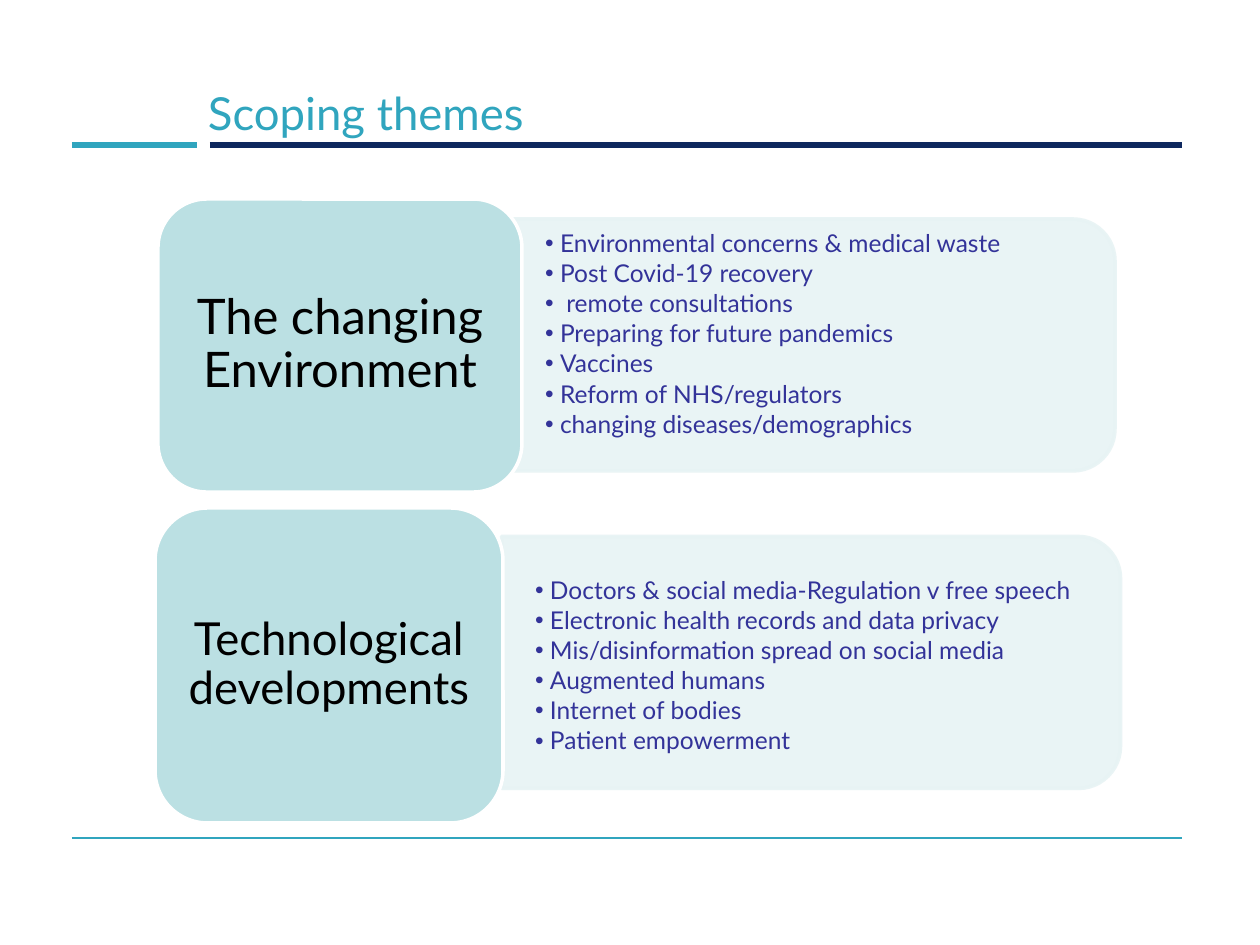
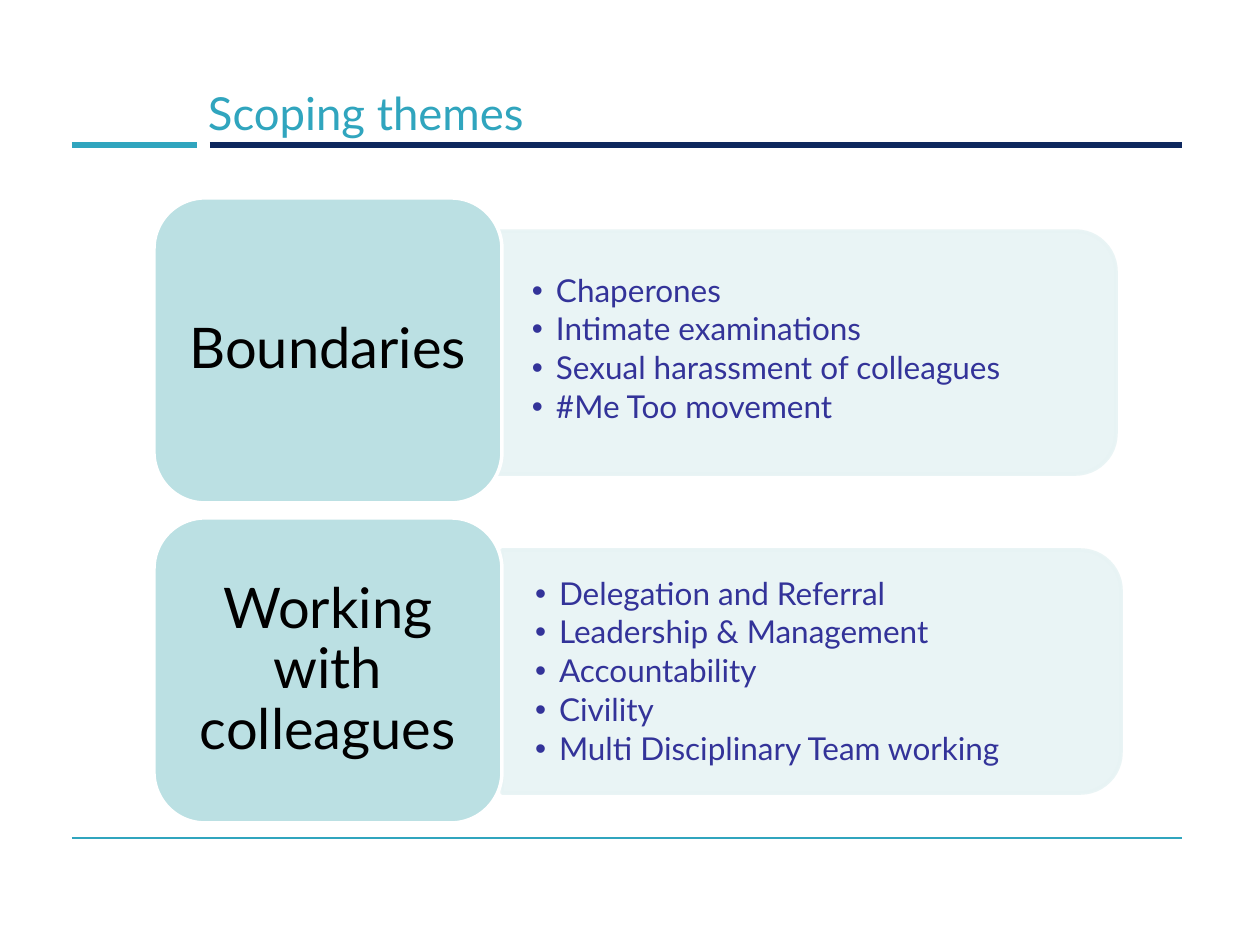
"""Build two slides of scoping themes, each with a pair of cards and lists."""
from dataclasses import dataclass

from lxml import etree
from pptx import Presentation
from pptx.dml.color import RGBColor
from pptx.enum.shapes import MSO_CONNECTOR, MSO_SHAPE
from pptx.enum.text import MSO_ANCHOR, MSO_AUTO_SIZE, PP_ALIGN
from pptx.oxml.ns import qn
from pptx.util import Emu, Pt

STRAIGHT = MSO_CONNECTOR.STRAIGHT
ROUND, HALF = MSO_SHAPE.ROUNDED_RECTANGLE, MSO_SHAPE.ROUND_2_SAME_RECTANGLE
TOP, MIDDLE = MSO_ANCHOR.TOP, MSO_ANCHOR.MIDDLE
LEFT, CENTER = PP_ALIGN.LEFT, PP_ALIGN.CENTER
NO_FIT = MSO_AUTO_SIZE.NONE
SCALE = 914400 / 126


@dataclass(frozen=True)
class Theme:
    font: str = "Lato"
    teal: str = "30A5BE"
    navy: str = "0E285E"
    card: str = "BBE0E3"
    panel: str = "E7F3F4"
    white: str = "FFFFFF"
    black: str = "000000"
    text: str = "333399"
    title: int = 26
    edge: int = 2
    alpha: int = 90000


@dataclass(frozen=True)
class Box:
    x: int
    y: int
    w: int
    h: int


@dataclass(frozen=True)
class Rule:
    x: int
    y: int
    end: int
    color: str
    width: float


@dataclass(frozen=True)
class Topic:
    name: str
    size: int
    card: Box
    panel: Box
    left: int
    top: int
    items: tuple[str, ...]


@dataclass(frozen=True)
class Page:
    size: int
    hang: int
    topics: tuple[Topic, ...]


THEME = Theme()
TITLE = Box(195, 66, 987, 92)
RULES = (
    Rule(210, 145, 1182, THEME.navy, 3),
    Rule(72, 145, 197, THEME.teal, 3),
    Rule(72, 838, 1182, THEME.teal, 0.75),
)
PAGES = (
    Page(14, 15, (
        Topic("The changing Environment", 28, Box(158, 199, 364, 293),
              Box(513, 219, 602, 252), 545, 231, (
                  "Environmental concerns & medical waste",
                  "Post Covid-19 recovery",
                  " remote consultations",
                  "Preparing for future pandemics",
                  "Vaccines",
                  "Reform of NHS/regulators",
                  "changing diseases/demographics")),
        Topic("Technological developments", 26, Box(155, 508, 348, 315),
              Box(502, 536, 619, 252), 535, 578, (
                  "Doctors & social media-Regulation v free speech",
                  "Electronic health records and data privacy",
                  "Mis/disinformation spread on social media",
                  "Augmented humans",
                  "Internet of bodies",
                  "Patient empowerment")),
    )),
    Page(18, 24, (
        Topic("Boundaries", 32, Box(154, 198, 348, 305),
              Box(497, 231, 619, 243), 532, 275, (
                  "Chaperones",
                  "Intimate examinations",
                  "Sexual harassment of colleagues",
                  "#Me Too movement")),
        Topic("Working with colleagues", 32, Box(154, 518, 348, 305),
              Box(502, 550, 619, 243), 535, 578, (
                  "Delegation and Referral",
                  "Leadership & Management",
                  "Accountability",
                  "Civility",
                  "Multi Disciplinary Team working")),
    )),
)


def px(num: float) -> Emu:
    """Turn px into EMU."""
    return Emu(round(num * SCALE))


def place(shape, box: Box) -> None:
    """Move a shape to a box."""
    shape.left, shape.top = px(box.x), px(box.y)
    shape.width, shape.height = px(box.w), px(box.h)


def write(shape, lines, *, size: int, color: str, align=LEFT, anchor=MIDDLE,
          pad=(0, 0), space: float = 1, after: float = 0, hang: int = 0) -> None:
    """Fill a shape with formatted paragraphs."""
    frame = shape.text_frame
    frame.word_wrap, frame.auto_size = True, NO_FIT
    frame.vertical_anchor = anchor
    frame.margin_left = frame.margin_right = px(pad[0])
    frame.margin_top = frame.margin_bottom = px(pad[1])
    for num, line in enumerate(lines):
        para = frame.add_paragraph() if num else frame.paragraphs[0]
        para.alignment, para.line_spacing = align, space
        para.space_before, para.space_after = Pt(0), Pt(after * size)
        if hang:
            props = para._p.get_or_add_pPr()
            props.set("marL", str(px(hang)))
            props.set("indent", str(-px(hang)))
            etree.SubElement(props, qn("a:buChar")).set("char", "•")
        run = para.add_run()
        run.text = line
        run.font.name, run.font.size = THEME.font, Pt(size)
        run.font.color.rgb = RGBColor.from_string(color)


def block(slide, kind, box: Box, fill: str, edge: str):
    """Draw a filled shape with an outline."""
    shape = slide.shapes.add_shape(kind, 0, 0, 0, 0)
    place(shape, box)
    shape.shadow.inherit = False
    shape.fill.solid()
    shape.fill.fore_color.rgb = RGBColor.from_string(fill)
    shape.line.color.rgb = RGBColor.from_string(edge)
    shape.line.width = Pt(THEME.edge)
    return shape


def draw_panel(slide, box: Box) -> None:
    """Draw a see-through panel rounded on its right side."""
    turn = (box.w - box.h) // 2
    tall = Box(box.x + turn, box.y - turn, box.h, box.w)
    shape = block(slide, HALF, tall, THEME.panel, THEME.panel)
    shape.rotation = 90
    for color in shape._element.spPr.iter(qn("a:srgbClr")):
        etree.SubElement(color, qn("a:alpha")).set("val", str(THEME.alpha))


def draw_topic(slide, topic: Topic, body, page: Page) -> None:
    """Draw a panel, its list and its card."""
    panel = topic.panel
    draw_panel(slide, panel)
    slide.shapes._spTree.append(body._element)
    place(body, Box(topic.left, topic.top, panel.x + panel.w - topic.left,
                    panel.y + panel.h - topic.top))
    write(body, topic.items, size=page.size, color=THEME.text, anchor=TOP,
          space=0.9, after=0.15, hang=page.hang)
    card = block(slide, ROUND, topic.card, THEME.card, THEME.white)
    write(card, [topic.name], size=topic.size, color=THEME.black,
          align=CENTER, pad=(15, 7), space=0.9, after=0.35)


def draw_rule(slide, layout, rule: Rule) -> None:
    """Draw a line and hand it to the layout."""
    line = slide.shapes.add_connector(
        STRAIGHT, px(rule.x), px(rule.y), px(rule.end), px(rule.y))
    line.line.color.rgb = RGBColor.from_string(rule.color)
    line.line.width = Pt(rule.width)
    etree.SubElement(line._element.spPr, qn("a:effectLst"))
    layout.shapes._spTree.append(line._element)


def main() -> None:
    """Build and save the deck."""
    deck = Presentation()
    deck.slide_width, deck.slide_height = px(1260), px(945)
    layout = deck.slide_layouts[3]
    slides = [deck.slides.add_slide(layout) for _ in PAGES]
    for rule in RULES:
        draw_rule(slides[0], layout, rule)
    for slide, page in zip(slides, PAGES):
        title, *bodies = slide.placeholders
        place(title, TITLE)
        write(title, ["Scoping themes"], size=THEME.title, color=THEME.teal,
              pad=(13, 6))
        for topic, body in zip(page.topics, bodies):
            draw_topic(slide, topic, body, page)
    deck.save("out.pptx")


if __name__ == "__main__":
    main()
